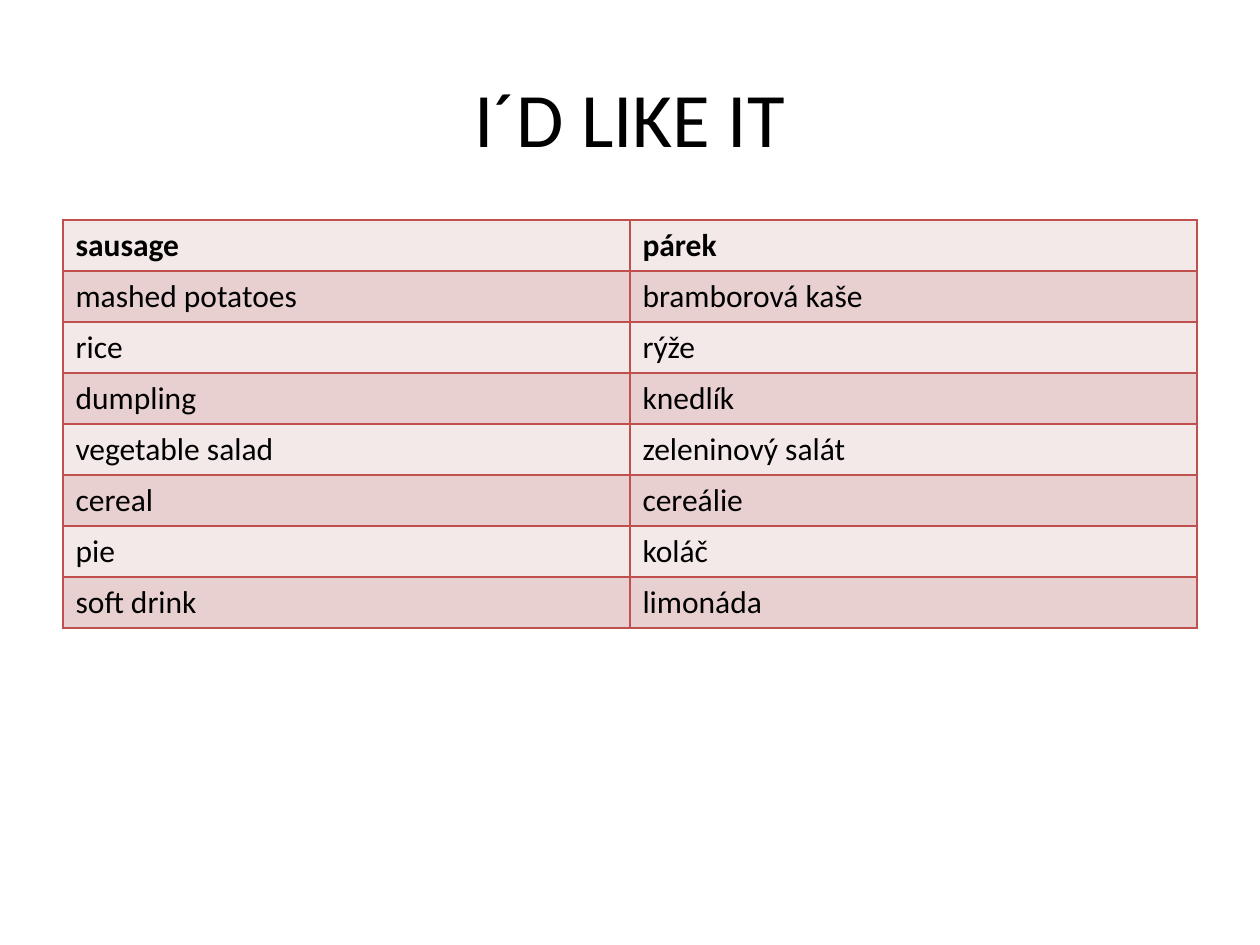
from lxml.etree import SubElement
from pptx import Presentation
from pptx.dml.color import RGBColor
from pptx.enum.text import MSO_ANCHOR, PP_ALIGN
from pptx.oxml.ns import qn
from pptx.util import Pt

# Content
TITLE = "I´D LIKE IT"
WORDS = [
    ("sausage", "párek"),
    ("mashed potatoes", "bramborová kaše"),
    ("rice", "rýže"),
    ("dumpling", "knedlík"),
    ("vegetable salad", "zeleninový salát"),
    ("cereal", "cereálie"),
    ("pie", "koláč"),
    ("soft drink", "limonáda"),
]

# Look
FONT = "Calibri"
BLACK = RGBColor(0x00, 0x00, 0x00)
BORDER = RGBColor(0xC0, 0x50, 0x4D)
BANDS = (RGBColor(0xF4, 0xE9, 0xE9), RGBColor(0xE8, 0xD0, 0xD0))

# Layout in px
PX = 914400 // 126
SLIDE_W, SLIDE_H = 1260, 945
LEFT, WIDTH = 63, 1134
TITLE_TOP, TITLE_H = 38, 157
TABLE_TOP, ROW_H = 220, 51


def px(*lengths):
    return [n * PX for n in lengths]


def add_run(p, text, size, bold=False):
    r = p.add_run()
    r.text = text
    r.font.name, r.font.size, r.font.bold = FONT, Pt(size), bold
    r.font.color.rgb = BLACK


def add_borders(cell):
    tc_pr = cell._tc.get_or_add_tcPr()
    for i, side in enumerate(("lnL", "lnR", "lnT", "lnB")):
        ln = SubElement(tc_pr, qn(f"a:{side}"), w=str(Pt(1)))
        fill = SubElement(ln, qn("a:solidFill"))
        SubElement(fill, qn("a:srgbClr"), val=str(BORDER))
        tc_pr.insert(i, ln)  # borders come before the cell fill


prs = Presentation()
prs.slide_width, prs.slide_height = px(SLIDE_W, SLIDE_H)
s = prs.slides.add_slide(prs.slide_layouts[6])

# Title
tf = s.shapes.add_textbox(*px(LEFT, TITLE_TOP, WIDTH, TITLE_H)).text_frame
tf.word_wrap = True
tf.vertical_anchor = MSO_ANCHOR.MIDDLE
p = tf.paragraphs[0]
p.alignment = PP_ALIGN.CENTER
add_run(p, TITLE, 44)

# Vocabulary table
rows, cols = len(WORDS), len(WORDS[0])
frame = s.shapes.add_table(rows, cols, *px(LEFT, TABLE_TOP, WIDTH, rows * ROW_H))
for i, pair in enumerate(WORDS):
    for j, word in enumerate(pair):
        cell = frame.table.cell(i, j)
        cell.fill.solid()
        cell.fill.fore_color.rgb = BANDS[i % 2]
        add_borders(cell)
        add_run(cell.text_frame.paragraphs[0], word, 18, bold=i == 0)

prs.save("out.pptx")
